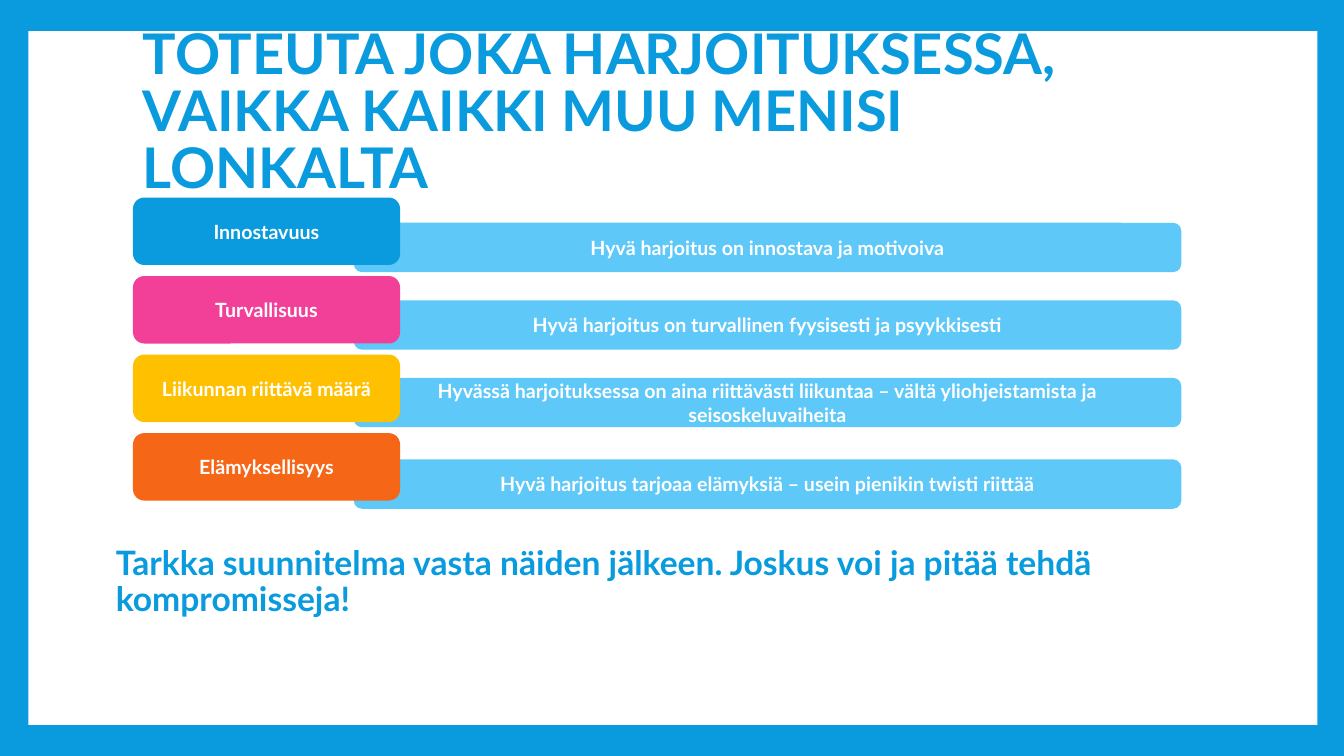
from dataclasses import dataclass

from pptx import Presentation
from pptx.dml.color import RGBColor
from pptx.enum.shapes import MSO_SHAPE
from pptx.enum.text import MSO_ANCHOR, PP_ALIGN
from pptx.util import Pt

RECT, ROUND = MSO_SHAPE.RECTANGLE, MSO_SHAPE.ROUNDED_RECTANGLE
TOP, MIDDLE = MSO_ANCHOR.TOP, MSO_ANCHOR.MIDDLE
LEFT, CENTER = PP_ALIGN.LEFT, PP_ALIGN.CENTER


@dataclass(frozen=True)
class Theme:
    """Colours, font and type sizes of the slide."""
    font: str = "Lato"
    blue: str = "099BDD"
    sky: str = "5EC8F8"
    pink: str = "F24099"
    yellow: str = "FFC000"
    orange: str = "F56617"
    white: str = "FFFFFF"
    title: int = 40
    closing: int = 24
    label: int = 14


T = Theme()

PRINCIPLES = [
    ("Innostavuus", "Hyvä harjoitus on innostava ja motivoiva", T.blue, 18),
    ("Turvallisuus", "Hyvä harjoitus on turvallinen fyysisesti ja psyykkisesti", T.pink, 17.3),
    ("Liikunnan riittävä määrä",
     "Hyvässä harjoituksessa on aina riittävästi liikuntaa – vältä yliohjeistamista ja seisoskeluvaiheita",
     T.yellow, 16.6),
    ("Elämyksellisyys", "Hyvä harjoitus tarjoaa elämyksiä – usein pienikin twisti riittää", T.orange, 18.7),
]


def write(sp, text, size, color, align=LEFT, anchor=MIDDLE, spacing=1.0, inset=7.2):
    """Put one bold paragraph into a shape."""
    tf = sp.text_frame
    tf.word_wrap = True
    tf.vertical_anchor = anchor
    tf.margin_left = Pt(inset)
    p = tf.paragraphs[0]
    p.alignment = align
    p.line_spacing = spacing
    r = p.add_run()
    r.text = text
    r.font.name = T.font
    r.font.size = Pt(size)
    r.font.bold = True
    r.font.color.rgb = RGBColor.from_string(color)


def add_panel(s, kind, x, y, w, h, fill):
    """Add a filled shape without outline or shadow."""
    sp = s.shapes.add_shape(kind, Pt(x), Pt(y), Pt(w), Pt(h))
    sp.shadow.inherit = False
    sp.fill.solid()
    sp.fill.fore_color.rgb = RGBColor.from_string(fill)
    sp.line.fill.background()
    return sp


def add_text(s, x, y, w, h, text, **fmt):
    """Add a text box with formatted text."""
    sp = s.shapes.add_textbox(Pt(x), Pt(y), Pt(w), Pt(h))
    write(sp, text, **fmt)


def add_frame(s, x, y, w, h):
    """Colour the background and lay the white page on it."""
    s.background.fill.solid()
    s.background.fill.fore_color.rgb = RGBColor.from_string(T.blue)
    add_panel(s, RECT, x, y, w, h, T.white)


def add_principles(s, x, y, w, pitch):
    """Stack the principles, each a label overlapping its description bar."""
    label_w, label_h, bar_x, bar_h = 190.8, 48.2, 157.7, 35.3
    for i, (name, description, color, drop) in enumerate(PRINCIPLES):
        top = y + i * pitch
        bar = add_panel(s, ROUND, x + bar_x, top + drop, w - bar_x, bar_h, T.sky)
        write(bar, description, size=T.label, color=T.white, align=CENTER)
        label = add_panel(s, ROUND, x, top, label_w, label_h, color)
        write(label, name, size=T.label, color=T.white, align=CENTER)


def main():
    """Build and save the slide."""
    prs = Presentation()
    prs.slide_width, prs.slide_height = Pt(960), Pt(540)
    s = prs.slides.add_slide(prs.slide_layouts[6])
    add_frame(s, 20.2, 22.3, 920.9, 495.4)
    add_text(s, 95, 22.3, 768, 118.8,
             "TOTEUTA JOKA HARJOITUKSESSA, VAIKKA KAIKKI MUU MENISI LONKALTA",
             size=T.title, color=T.blue, spacing=0.85)
    add_principles(s, 95, 141.1, 748.8, 56.1)
    add_text(s, 61.2, 386.6, 828, 66.2,
             "Tarkka suunnitelma vasta näiden jälkeen. Joskus voi ja pitää tehdä kompromisseja!",
             size=T.closing, color=T.blue, anchor=TOP, spacing=0.9, inset=21.6)
    prs.save("out.pptx")


if __name__ == "__main__":
    main()
